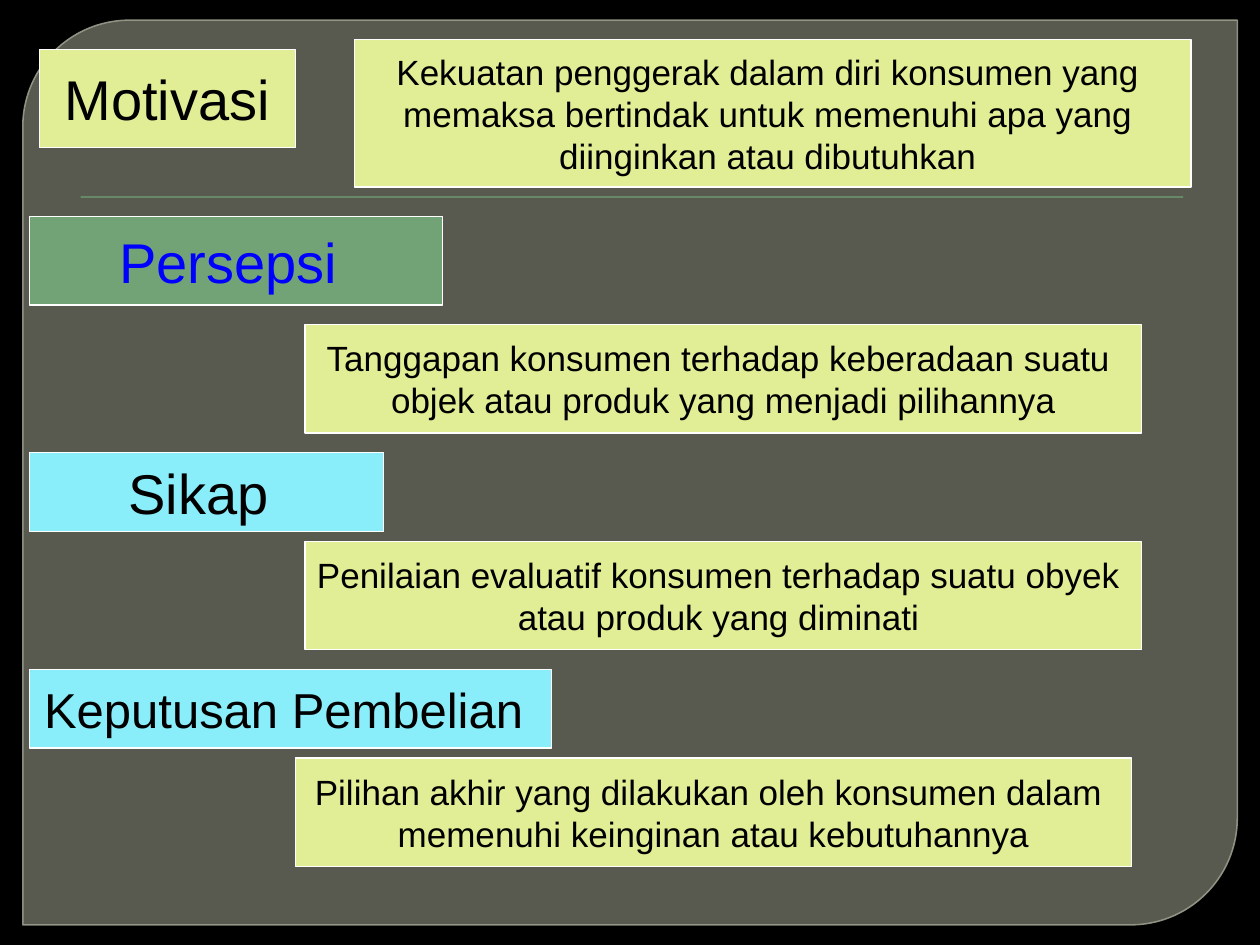
from lxml.etree import SubElement
from pptx import Presentation
from pptx.dml.color import RGBColor
from pptx.enum.shapes import MSO_SHAPE as Shape
from pptx.enum.text import MSO_ANCHOR as Anchor, PP_ALIGN as Align
from pptx.oxml.ns import qn
from pptx.util import Pt

LIME, GREEN, CYAN = "E1EE96", "72A376", "8AEDFA"
BLACK, WHITE, BLUE = "000000", "FFFFFF", "0000FF"

# text, left, top, width, height, fill, size, ink
TERMS = [
    ("Motivasi", 22.5, 28.1, 146.2, 56.2, LIME, 32, BLACK),
    ("Persepsi ", 16.8, 123.8, 236.2, 50.6, GREEN, 32, BLUE),
    ("Sikap ", 16.8, 258.6, 202.5, 45, CYAN, 32, BLACK),
    ("Keputusan Pembelian ", 16.8, 382.5, 298.2, 45, CYAN, 28, BLACK),
]

# lines, left, top, height
NOTES = [
    (["Kekuatan penggerak dalam diri konsumen yang ",
      "memaksa bertindak untuk memenuhi apa yang ",
      "diinginkan atau dibutuhkan "], 202.5, 22.5, 84.4),
    (["Tanggapan konsumen terhadap keberadaan suatu ",
      "objek atau produk yang menjadi pilihannya"], 174.4, 185.6, 61.9),
    (["Penilaian evaluatif konsumen terhadap suatu obyek ",
      "atau produk yang diminati "], 174.4, 309.4, 61.9),
    (["Pilihan akhir yang dilakukan oleh konsumen dalam ",
      "memenuhi keinginan atau kebutuhannya"], 168.7, 433.1, 61.9),
]
NOTE_W = 478.1


def paint(color, value, alpha=None):
    """Set a colour from hex, with opacity in percent if given."""
    color.rgb = RGBColor.from_string(value)
    if alpha:
        tag = color._xFill.find(qn("a:srgbClr"))
        SubElement(tag, qn("a:alpha")).set("val", str(alpha * 1000))


def block(slide, kind, left, top, width, height, fill, alpha=None):
    shape = slide.shapes.add_shape(
        kind, Pt(left), Pt(top), Pt(width), Pt(height))
    shape.shadow.inherit = False
    shape.fill.solid()
    paint(shape.fill.fore_color, fill, alpha)
    return shape


def edge(shape, value, width, alpha=None):
    shape.line.width = Pt(width)
    shape.line.fill.solid()
    paint(shape.line.fill.fore_color, value, alpha)


def panel(slide):
    shape = block(slide, Shape.ROUND_2_DIAG_RECTANGLE,
                  13, 11.5, 694, 517, "888B7B", 65)
    shape.adjustments[0] = 0.118
    shape.adjustments[1] = 0
    edge(shape, "9DA090", 0.87, 88)


def rule(slide):
    bar = block(slide, Shape.RECTANGLE, 46.1, 112.2, 630, 0.72, GREEN)
    bar.line.fill.background()


def label(slide, text, left, top, width, height, fill, size, ink):
    box = block(slide, Shape.RECTANGLE, left, top, width, height, fill)
    edge(box, WHITE, 0.75)
    frame = box.text_frame
    frame.text = text
    frame.word_wrap = False
    frame.vertical_anchor = Anchor.MIDDLE
    for para in frame.paragraphs:
        para.alignment = Align.CENTER
        for run in para.runs:
            run.font.name = "Arial"
            run.font.size = Pt(size)
            paint(run.font.color, ink)


def main():
    deck = Presentation()
    deck.slide_width, deck.slide_height = Pt(720), Pt(540)
    slide = deck.slides.add_slide(deck.slide_layouts[6])
    slide.background.fill.solid()
    paint(slide.background.fill.fore_color, BLACK)
    panel(slide)
    rule(slide)
    for term in TERMS:
        label(slide, *term)
    for lines, left, top, height in NOTES:
        label(slide, "\n".join(lines), left, top, NOTE_W, height,
              LIME, 20, BLACK)
    deck.save("out.pptx")


if __name__ == "__main__":
    main()
